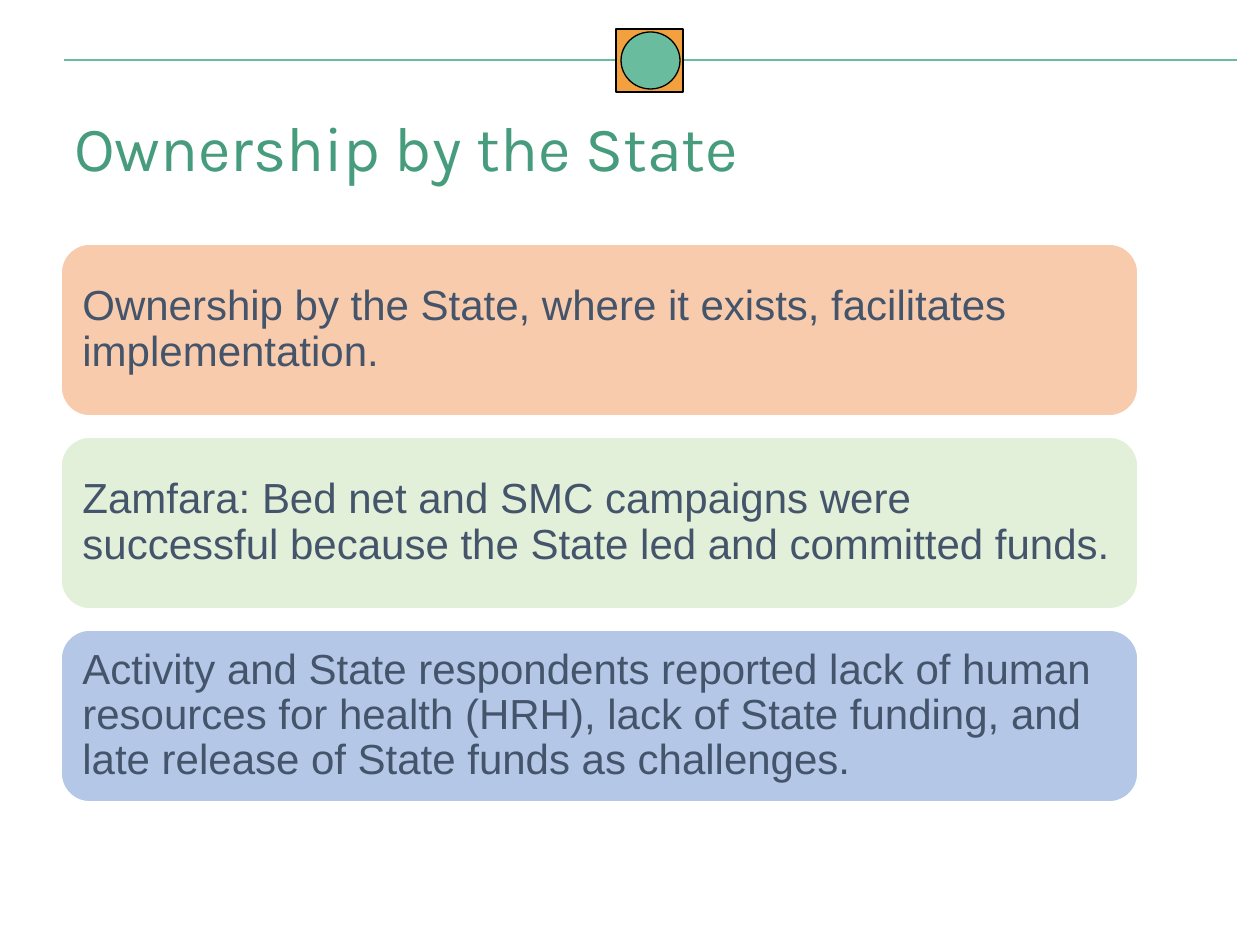
import pptx
import pptx.util
import pptx.dml.color
import pptx.enum.shapes
import pptx.enum.text
import pptx.oxml.ns
import lxml.etree

RGB = pptx.dml.color.RGBColor
SHAPE = pptx.enum.shapes.MSO_SHAPE
ANCHOR = pptx.enum.text.MSO_ANCHOR
ALIGN = pptx.enum.text.PP_ALIGN

MINT = RGB(0x69, 0xBC, 0x9E)
GREEN = RGB(0x46, 0x9C, 0x7D)
ORANGE = RGB(0xF2, 0xA1, 0x3E)
BLACK = RGB(0, 0, 0)
WHITE = RGB(0xFF, 0xFF, 0xFF)
SLATE = RGB(0x44, 0x54, 0x6A)
PEACH = RGB(0xF8, 0xCB, 0xAD)
LIME = RGB(0xE2, 0xF0, 0xD9)
BLUE = RGB(0xB4, 0xC7, 0xE7)

POINTS = [
    ("Ownership by the State, where it exists, facilitates implementation.", PEACH),
    ("Zamfara: Bed net and SMC campaigns were successful because the State led "
     "and committed funds.", LIME),
    ("Activity and State respondents reported lack of human resources for health "
     "(HRH), lack of State funding, and late release of State funds as challenges.", BLUE),
]


def px(n):
    return pptx.util.Emu(round(n * 914400 / 126))


def add_box(slide, kind, box, fill, edge, width):
    shape = slide.shapes.add_shape(kind, *map(px, box))
    shape.shadow.inherit = False
    shape.fill.solid()
    shape.fill.fore_color.rgb = fill
    shape.line.color.rgb = edge
    shape.line.width = pptx.util.Pt(width)
    return shape


def set_text(shape, text, font, size, color, anchor, inset):
    frame = shape.text_frame
    frame.text = text
    frame.word_wrap = True
    frame.vertical_anchor = anchor
    frame.margin_left = frame.margin_right = px(inset[0])
    frame.margin_top = frame.margin_bottom = px(inset[1])
    para = frame.paragraphs[0]
    para.alignment = ALIGN.LEFT
    para.line_spacing = 0.9
    run = para.runs[0]
    run.font.name = font
    run.font.size = pptx.util.Pt(size)
    run.font.color.rgb = color


def add_rule(slide, box):
    left, top, width, height = box
    mid = top + height // 2
    line = slide.shapes.add_connector(
        pptx.enum.shapes.MSO_CONNECTOR.STRAIGHT,
        px(left), px(mid), px(left + width), px(mid))
    line.line.color.rgb = MINT
    line.line.width = pptx.util.Pt(0.75)
    lxml.etree.SubElement(line._element.spPr, pptx.oxml.ns.qn("a:effectLst"))
    add_box(slide, SHAPE.RECTANGLE, (left + 552, top, 67, height), ORANGE, BLACK, 1)
    add_box(slide, SHAPE.OVAL, (left + 557, top + 3, 59, height - 6), MINT, BLACK, 0.75)


def add_title(slide, box):
    title = slide.shapes.add_textbox(*map(px, box))
    set_text(title, "Ownership by the State", "Karla", 36, GREEN, ANCHOR.TOP, (13, 6))


def add_cards(slide, box):
    left, top, width, height = box
    gap = 21
    tall = (height - gap * (len(POINTS) - 1)) / len(POINTS)
    for i, (text, fill) in enumerate(POINTS):
        spot = (left, top + i * (tall + gap), width, tall)
        card = add_box(slide, SHAPE.ROUNDED_RECTANGLE, spot, fill, WHITE, 1)
        set_text(card, text, "Arial", 24, SLATE, ANCHOR.MIDDLE, (13, 13))


def main():
    deck = pptx.Presentation()
    deck.slide_width = px(1260)
    deck.slide_height = px(945)
    slide = deck.slides.add_slide(deck.slide_layouts[6])
    add_rule(slide, (64, 29, 1173, 63))
    add_title(slide, (61, 111, 941, 116))
    add_cards(slide, (61, 244, 1077, 558))
    deck.save("out.pptx")


if __name__ == "__main__":
    main()
